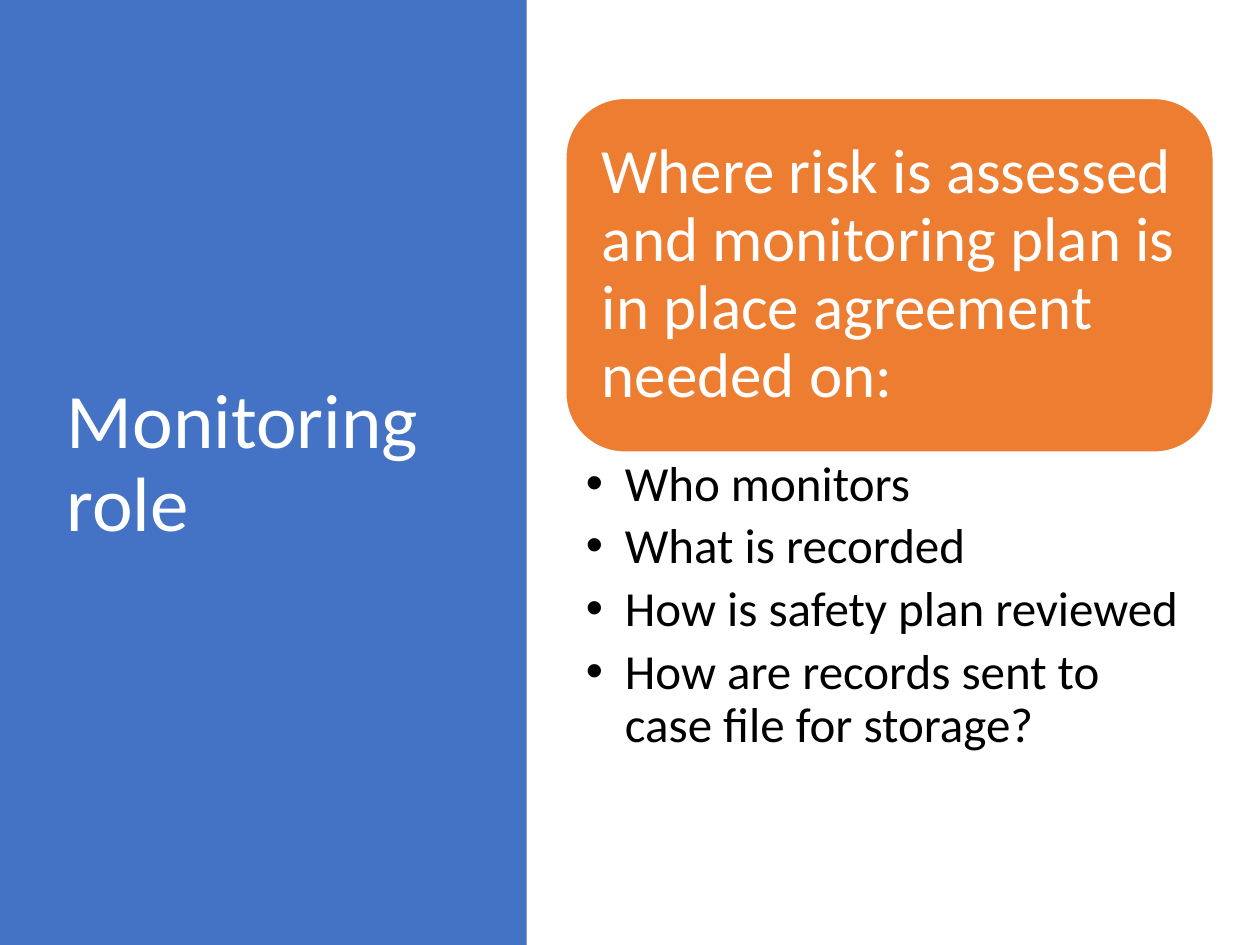
from dataclasses import dataclass

from pptx import Presentation
from pptx.dml.color import RGBColor
from pptx.enum.shapes import MSO_SHAPE
from pptx.enum.text import MSO_ANCHOR, MSO_AUTO_SIZE, PP_ALIGN
from pptx.util import Inches, Pt


@dataclass(frozen=True)
class Theme:
    font: str = "Calibri"
    blue: str = "4472C4"
    orange: str = "ED7D31"
    white: str = "FFFFFF"
    black: str = "000000"
    title: int = 44
    lead: int = 36
    item: int = 28


class Deck:
    """Draws styled parts on a slide laid out as a 100 by 75 grid."""

    cols, rows = 100, 75

    def __init__(self, theme):
        self.theme = theme
        self.file = Presentation()
        self.file.slide_width, self.file.slide_height = Inches(10), Inches(7.5)
        self.slide = self.file.slides.add_slide(self.file.slide_layouts[1])

    def cells(self, left, top, width, height):
        across = self.file.slide_width / self.cols
        down = self.file.slide_height / self.rows
        return [round(n * unit) for n, unit in
                zip((left, top, width, height), (across, down) * 2)]

    def place(self, shape, area):
        shape.left, shape.top, shape.width, shape.height = self.cells(*area)

    def label(self, shape, lines, size, color, pads, after=0, anchor=MSO_ANCHOR.MIDDLE):
        frame = shape.text_frame
        frame.text = "\n".join(lines)
        frame.word_wrap = True
        frame.auto_size = MSO_AUTO_SIZE.NONE
        frame.vertical_anchor = anchor
        (frame.margin_left, frame.margin_top,
         frame.margin_right, frame.margin_bottom) = map(Inches, pads)
        for para in frame.paragraphs:
            para.alignment = PP_ALIGN.LEFT
            para.line_spacing = 0.9
            para.space_before, para.space_after = Pt(0), Pt(size * after)
            para.font.name, para.font.size = self.theme.font, Pt(size)
            para.font.color.rgb = RGBColor.from_string(color)

    def block(self, kind, area, fill, edge=None):
        shape = self.slide.shapes.add_shape(kind, *self.cells(*area))
        shape.shadow.inherit = False
        shape.fill.solid()
        shape.fill.fore_color.rgb = RGBColor.from_string(fill)
        if edge:
            shape.line.color.rgb = RGBColor.from_string(edge)
            shape.line.width = Pt(1)
        else:
            shape.line.fill.background()
        return shape

    def panel(self, area):
        shape = self.block(MSO_SHAPE.RECTANGLE, area, self.theme.blue)
        self.slide.shapes.element.insert(2, shape.element)

    def title(self, text, area):
        shape = self.slide.shapes.title
        self.place(shape, area)
        self.label(shape, [text], self.theme.title, self.theme.white, (0.1, 0.05, 0.1, 0.05))

    def card(self, text, area):
        shape = self.block(MSO_SHAPE.ROUNDED_RECTANGLE, area, self.theme.orange, self.theme.white)
        self.label(shape, [text], self.theme.lead, self.theme.white, (0.15,) * 4)

    def items(self, lines, area):
        shape = self.slide.placeholders[1]
        self.place(shape, area)
        self.label(shape, lines, self.theme.item, self.theme.black,
                   (0.16, 0.05, 0.28, 0.05), after=0.2, anchor=MSO_ANCHOR.TOP)
        hang = Inches(0.31)
        for para in shape.text_frame.paragraphs:
            props = para._p.get_or_add_pPr()
            props.set("marL", str(hang))
            props.set("indent", str(-hang))


def main():
    deck = Deck(Theme())
    left, top, width, height = 44.9, 7.8, 51.4, 28.1
    deck.panel((0, 0, 41.8, deck.rows))
    deck.title("Monitoring role", (4.3, 6.8, 31.2, 60.2))
    deck.card("Where risk is assessed and monitoring plan is in place agreement needed on:",
              (left, top, width, height))
    deck.items(["Who monitors", "What is recorded", "How is safety plan reviewed",
                "How are records sent to case file for storage?"],
               (left, top + height, width, 30.2))
    deck.file.save("out.pptx")


if __name__ == "__main__":
    main()
